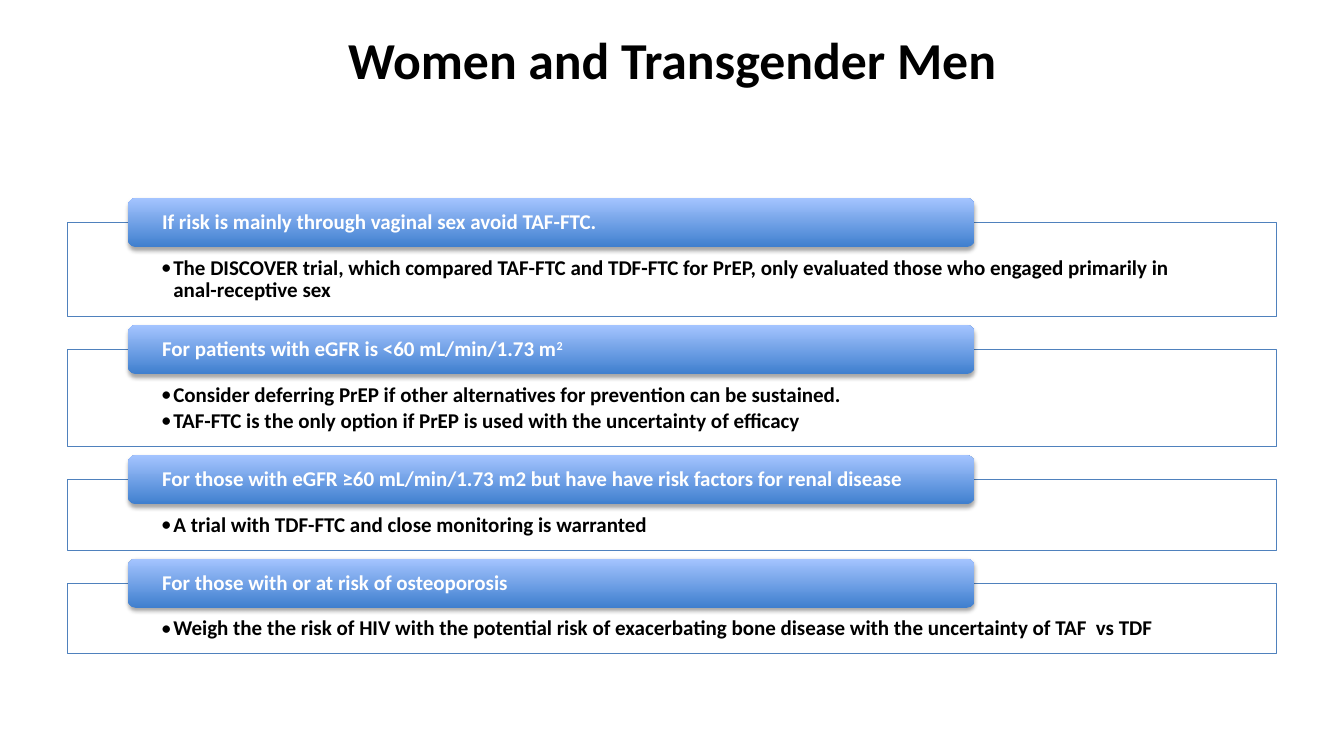
from dataclasses import dataclass
from typing import Any

from lxml.etree import SubElement as Sub
from pptx import Presentation
from pptx.dml.color import RGBColor
from pptx.enum.shapes import MSO_SHAPE as Kind
from pptx.enum.text import MSO_ANCHOR as Anchor, PP_ALIGN as Align
from pptx.oxml.ns import qn
from pptx.util import Cm, Pt

LEFT, WIDTH = 1.7, 30.48
TOP, GAP = 5.61, 0.83
INDENT = Cm(0.31)
FONT = {"name": "Calibri", "size": Pt(15), "bold": True}
PARA = {"alignment": Align.LEFT, "line_spacing": 0.9}
BODY = {
    "word_wrap": True, "vertical_anchor": Anchor.TOP,
    "margin_left": Cm(2.36), "margin_right": Cm(2.36),
    "margin_top": Cm(0.87), "margin_bottom": Cm(0.2),
}
HEAD = {
    "word_wrap": True, "vertical_anchor": Anchor.MIDDLE,
    "margin_left": Cm(0.8), "margin_right": Cm(0.8),
    "margin_top": 0, "margin_bottom": 0,
}
TITLE = {"word_wrap": True, "vertical_anchor": Anchor.TOP, "margin_top": Cm(0.12)}


@dataclass
class Panel:
    head: str
    points: list[str]
    height: float
    power: str = ""


PANELS = [
    Panel("If risk is mainly through vaginal sex avoid TAF-FTC.",
          ["The DISCOVER trial, which compared TAF-FTC and TDF-FTC for PrEP, "
           "only evaluated those who engaged primarily in anal-receptive sex"], 2.37),
    Panel("For patients with eGFR is <60 mL/min/1.73 m",
          ["Consider deferring PrEP if other alternatives for prevention can be sustained.",
           "TAF-FTC is the only option if PrEP is used with the uncertainty of efficacy"],
          2.45, "2"),
    Panel("For those with eGFR ≥60 mL/min/1.73 m2 but have have risk factors "
          "for renal disease",
          ["A trial with TDF-FTC and close monitoring is warranted"], 1.78),
    Panel("For those with or at risk of osteoporosis",
          ["Weigh the the risk of HIV with the potential risk of exacerbating "
           "bone disease with the uncertainty of TAF  vs TDF"], 1.78),
]


def rgb(code: str) -> RGBColor:
    return RGBColor.from_string(code)


def apply(item: Any, style: dict[str, Any]) -> None:
    for key, value in style.items():
        setattr(item, key, value)


def write(para: Any, text: str, color: str, font: dict[str, Any] = FONT) -> Any:
    apply(para, PARA)
    run = para.add_run()
    run.text = text
    apply(run.font, font)
    run.font.color.rgb = rgb(color)
    return run


def bullet(para: Any) -> None:
    para.space_after = Pt(2.25)
    props = para._p.get_or_add_pPr()
    props.set("marL", str(INDENT))
    props.set("indent", str(-INDENT))
    Sub(props, qn("a:buFont"), typeface="Calibri")
    Sub(props, qn("a:buChar"), char="•")


def shade(shape: Any) -> None:
    effects = shape._element.spPr.find(qn("a:effectLst"))
    outer = Sub(effects, qn("a:outerShdw"), blurRad=str(Pt(3.1)), dist=str(Pt(1.8)),
                dir="5400000", rotWithShape="0")
    color = Sub(outer, qn("a:srgbClr"), val="000000")
    Sub(color, qn("a:alpha"), val="35000")


def draw_body(slide: Any, panel: Panel, top: float) -> None:
    box = slide.shapes.add_shape(Kind.RECTANGLE, Cm(LEFT), Cm(top),
                                 Cm(WIDTH), Cm(panel.height))
    box.shadow.inherit = False
    box.fill.solid()
    box.fill.fore_color.rgb = rgb("FFFFFF")
    white = box._element.spPr.find(qn("a:solidFill")).find(qn("a:srgbClr"))
    Sub(white, qn("a:alpha"), val="90000")
    box.line.color.rgb = rgb("4F81BD")
    box.line.width = Pt(0.75)
    frame = box.text_frame
    apply(frame, BODY)
    for index, point in enumerate(panel.points):
        para = frame.add_paragraph() if index else frame.paragraphs[0]
        write(para, point, "000000")
        bullet(para)


def draw_head(slide: Any, panel: Panel, top: float) -> None:
    bar = slide.shapes.add_shape(Kind.ROUNDED_RECTANGLE, Cm(LEFT + WIDTH / 20),
                                 Cm(top - 0.62), Cm(WIDTH * 0.7), Cm(1.24))
    bar.fill.gradient()
    bar.fill.gradient_angle = 90
    for stop, color in zip(bar.fill.gradient_stops, ("3F7FCE", "A4C4FF")):
        stop.color.rgb = rgb(color)
    bar.line.fill.background()
    bar.shadow.inherit = False
    shade(bar)
    frame = bar.text_frame
    apply(frame, HEAD)
    para = frame.paragraphs[0]
    write(para, panel.head, "FFFFFF")
    if panel.power:
        run = write(para, panel.power, "FFFFFF")
        run._r.get_or_add_rPr().set("baseline", "30000")


def draw_title(slide: Any, text: str) -> None:
    box = slide.shapes.add_textbox(Cm(LEFT), Cm(0.76), Cm(WIDTH), Cm(3.18))
    apply(box.text_frame, TITLE)
    para = box.text_frame.paragraphs[0]
    write(para, text, "000000", FONT | {"size": Pt(37)})
    para.alignment = Align.CENTER


def main() -> None:
    deck = Presentation()
    apply(deck, {"slide_width": Cm(33.87), "slide_height": Cm(19.05)})
    slide = deck.slides.add_slide(deck.slide_layouts[6])
    draw_title(slide, "Women and Transgender Men")
    top = TOP
    for panel in PANELS:
        draw_body(slide, panel, top)
        draw_head(slide, panel, top)
        top += panel.height + GAP
    deck.save("out.pptx")


if __name__ == "__main__":
    main()
